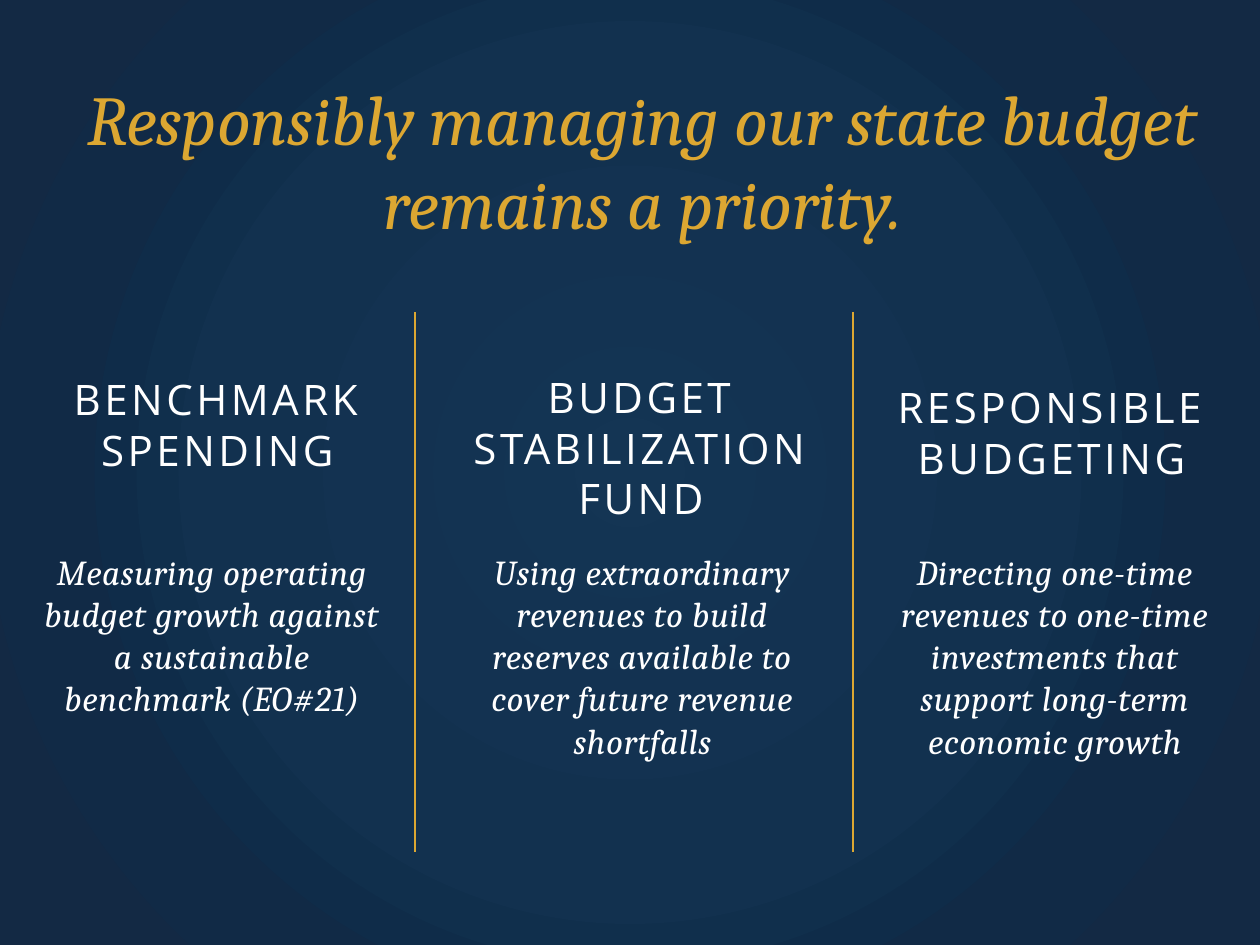
from lxml import etree
from pptx import Presentation
from pptx.dml.color import RGBColor
from pptx.enum.shapes import MSO_CONNECTOR
from pptx.enum.text import MSO_ANCHOR, MSO_AUTO_SIZE, PP_ALIGN
from pptx.oxml.ns import qn
from pptx.util import Emu, Pt

STRAIGHT = MSO_CONNECTOR.STRAIGHT
TOP = MSO_ANCHOR.TOP
GROW = MSO_AUTO_SIZE.SHAPE_TO_FIT_TEXT
CENTER = PP_ALIGN.CENTER

SCALE = 914400 / 126
COLORS = {"gold": "DCA732", "white": "FFFFFF"}
GLOW = {
    0: "143555", 7: "143554", 16: "133453", 25: "133352", 39: "133251",
    52: "12314F", 68: "0F2C49", 82: "112A46", 100: "132944",
}
TITLE = {"name": "Cambria", "size": Pt(40), "italic": True, "bold": False}
HEAD = {"name": "Open Sans", "size": Pt(24)}
BODY = {"name": "Cambria", "size": Pt(20), "italic": True}
FRAME = {"word_wrap": True, "auto_size": GROW, "vertical_anchor": TOP}
FLUSH = dict.fromkeys(
    ("margin_left", "margin_top", "margin_right", "margin_bottom"), 0)

BODY_TOP = 551
COLUMNS = [
    ("BENCHMARK SPENDING", (19, 374, 397, 102),
     "Measuring operating budget growth against a sustainable benchmark (EO#21)",
     (37, 350, 212)),
    ("BUDGET STABILIZATION FUND", (436, 372, 410, 152),
     "Using extraordinary revenues to build reserves available to cover "
     "future revenue shortfalls",
     (480, 325, 255)),
    ("RESPONSIBLE BUDGETING", (862, 382, 379, 102),
     "Directing one-time revenues to one-time investments that support "
     "long-term economic growth",
     (886, 338, 255)),
]
RULES = (415, 853)


def px(count):
    return Emu(round(count * SCALE))


def apply(item, values):
    for key, value in values.items():
        setattr(item, key, value)


def paint(slide):
    fill = slide.background.fill
    fill.gradient()
    grad = slide.background._cSld.find(".//" + qn("a:gradFill"))
    for child in list(grad):
        grad.remove(child)
    stops = etree.SubElement(grad, qn("a:gsLst"))
    for place, color in GLOW.items():
        stop = etree.SubElement(stops, qn("a:gs"), pos=str(place * 1000))
        etree.SubElement(stop, qn("a:srgbClr"), val=color)
    shade = etree.SubElement(grad, qn("a:path"), {"path": "circle"})
    sides = dict.fromkeys("ltrb", "50000")
    etree.SubElement(shade, qn("a:fillToRect"), sides)


def write(shape, text, style, color, gap=0):
    frame = shape.text_frame
    apply(frame, FRAME)
    para = frame.paragraphs[0]
    para.alignment = CENTER
    run = para.add_run()
    run.text = text
    apply(run.font, style)
    run.font.color.rgb = RGBColor.from_string(COLORS[color])
    if gap:
        run._r.get_or_add_rPr().set("spc", str(gap))


def add_title(slide, text, box):
    title = slide.shapes.title
    apply(title, dict(zip(("left", "top", "width", "height"), map(px, box))))
    write(title, text, TITLE, "gold")


def add_text(slide, text, box, style, gap):
    shape = slide.shapes.add_textbox(*map(px, box))
    apply(shape.text_frame, FLUSH)
    write(shape, text, style, "white", gap)


def add_rule(slide, x, top, end):
    rule = slide.shapes.add_connector(STRAIGHT, *map(px, (x, top, x, end)))
    rule.line.color.rgb = RGBColor.from_string(COLORS["gold"])
    rule.line.width = Pt(1.5)
    etree.SubElement(rule._element.spPr, qn("a:effectLst"))


def main():
    deck = Presentation()
    deck.slide_width, deck.slide_height = px(1260), px(945)
    slide = deck.slides.add_slide(deck.slide_layouts[5])
    paint(slide)
    add_title(slide, "Responsibly managing our state budget remains a priority.",
              (44, 69, 1197, 183))
    for head, box, body, (left, width, height) in COLUMNS:
        add_text(slide, head, box, HEAD, 200)
        add_text(slide, body, (left, BODY_TOP, width, height), BODY, 40)
    for x in RULES:
        add_rule(slide, x, 312, 852)
    deck.save("out.pptx")


if __name__ == "__main__":
    main()
